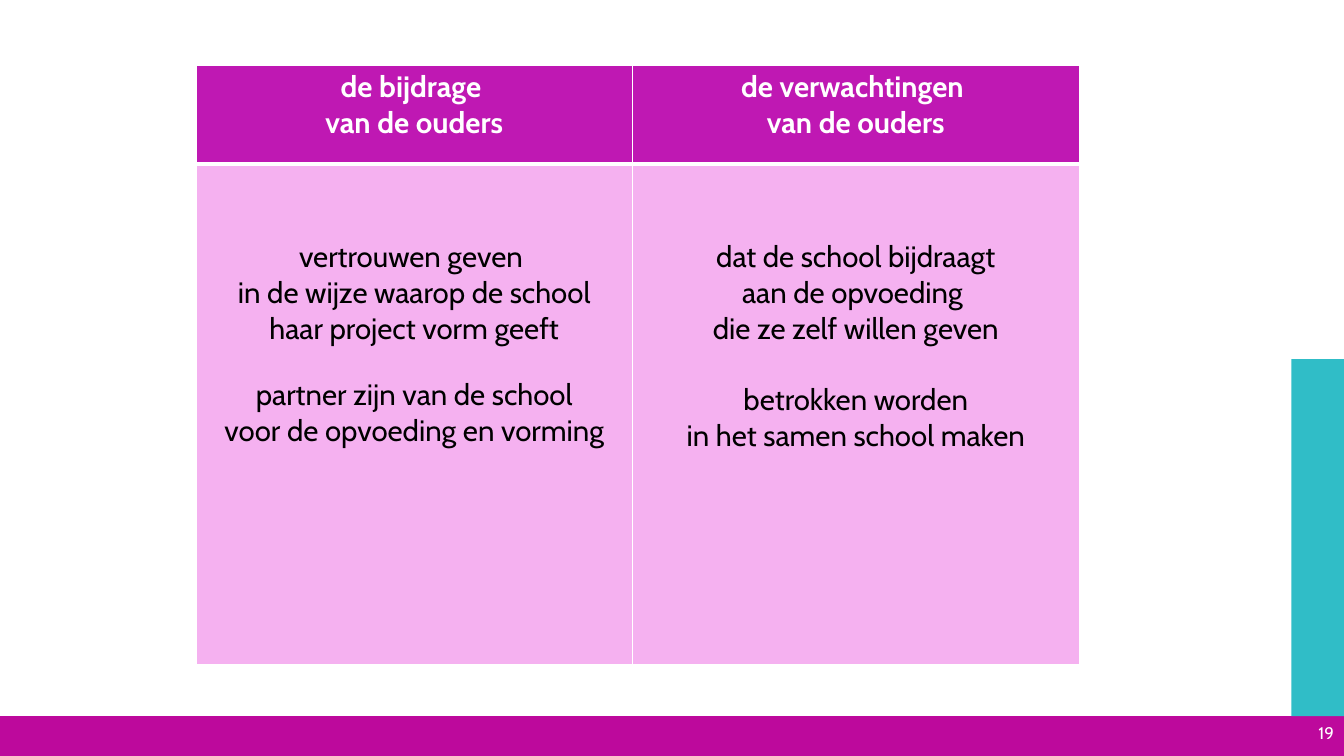
"""Build the slide on what parents contribute and expect."""
from lxml.etree import SubElement
from pptx import Presentation
from pptx.dml.color import RGBColor
from pptx.enum.shapes import MSO_SHAPE
from pptx.enum.text import MSO_ANCHOR, PP_ALIGN
from pptx.oxml.ns import qn
from pptx.util import Pt

PX = 9525
WHITE = "FFFFFF"
HEADER = {"size": Pt(21), "name": "Cabin", "bold": True, "color": WHITE}
BODY = {"size": Pt(21), "name": "Cabin", "bold": False, "color": "000000"}
NUMBER = {"size": Pt(12), "name": "Cabin", "color": WHITE}
COLUMNS = [
    {"width": 415, "gap": 21.5,
     "header": ["de bijdrage ", "van de ouders"],
     "body": [["vertrouwen geven ", "in de wijze waarop de school",
               "haar project vorm geeft"],
              ["partner zijn van de school", "voor de opvoeding en vorming"]]},
    {"width": 426, "gap": 25.5,
     "header": ["de verwachtingen ", "van de ouders"],
     "body": [["dat de school bijdraagt", "aan de opvoeding ",
               "die ze zelf willen geven"],
              ["betrokken worden", "in het samen school maken"]]},
]


def px(*values):
    return [v * PX for v in values]


def rgb(value):
    return RGBColor.from_string(value)


def set_font(font, fmt):
    for key, value in fmt.items():
        if key == "color":
            font.color.rgb = rgb(value)
        else:
            setattr(font, key, value)


def add_bar(slide, box, color):
    sp = slide.shapes.add_shape(MSO_SHAPE.RECTANGLE, *px(*box))
    sp.shadow.inherit = False
    sp.fill.solid()
    sp.fill.fore_color.rgb = rgb(color)
    sp.line.fill.background()


def add_number(slide, box, text):
    tf = slide.shapes.add_textbox(*px(*box)).text_frame
    tf.word_wrap = True
    tf.vertical_anchor = MSO_ANCHOR.MIDDLE
    p = tf.paragraphs[0]
    p.alignment = PP_ALIGN.RIGHT
    r = p.add_run()
    r.text = text
    set_font(r.font, NUMBER)


def set_borders(cell, widths):
    tc_pr = cell._tc.get_or_add_tcPr()
    for i, (side, width) in enumerate(widths.items()):
        ln = SubElement(tc_pr, qn(f"a:ln{side}"), w=str(Pt(width)))
        fill = SubElement(ln, qn("a:solidFill"))
        SubElement(fill, qn("a:srgbClr"), val=WHITE)
        tc_pr.insert(i, ln)


def fill_cell(cell, groups, fmt, color, top=4, gap=0):
    cell.fill.solid()
    cell.fill.fore_color.rgb = rgb(color)
    cell.margin_left, cell.margin_right = px(7, 7)
    cell.margin_top, cell.margin_bottom = px(top, 4)
    tf = cell.text_frame
    p = tf.paragraphs[0]
    for g, lines in enumerate(groups):
        for i, line in enumerate(lines):
            if g or i:
                p = tf.add_paragraph()
            if g and i == 0:
                p.space_before = Pt(gap)
            p.alignment = PP_ALIGN.CENTER
            r = p.add_run()
            r.text = line
            set_font(r.font, fmt)


def add_parents_table(slide, left, top, heights):
    width = sum(col["width"] for col in COLUMNS)
    box = px(left, top, width, sum(heights))
    table = slide.shapes.add_table(len(heights), len(COLUMNS), *box).table
    for row, height in zip(table.rows, px(*heights)):
        row.height = height
    for c, col in enumerate(COLUMNS):
        table.columns[c].width = col["width"] * PX
        head, body = table.cell(0, c), table.cell(1, c)
        fill_cell(head, [col["header"]], HEADER, "BF18B3")
        fill_cell(body, col["body"], BODY, "F5B1F0", 72, col["gap"])
        set_borders(head, {"L": 1, "R": 1, "T": 1, "B": 3})
        set_borders(body, {"L": 1, "R": 1, "T": 3, "B": 1})


def main():
    prs = Presentation()
    prs.slide_width, prs.slide_height = px(1280, 720)
    slide = prs.slides.add_slide(prs.slide_layouts[6])
    add_bar(slide, (0, 682, 1280, 38), "BD099C")
    add_bar(slide, (1230, 342, 50, 340), "30BDC7")
    add_number(slide, (991, 675, 289, 45), "19")
    add_parents_table(slide, 187, 62, [94, 477])
    prs.save("out.pptx")


if __name__ == "__main__":
    main()
